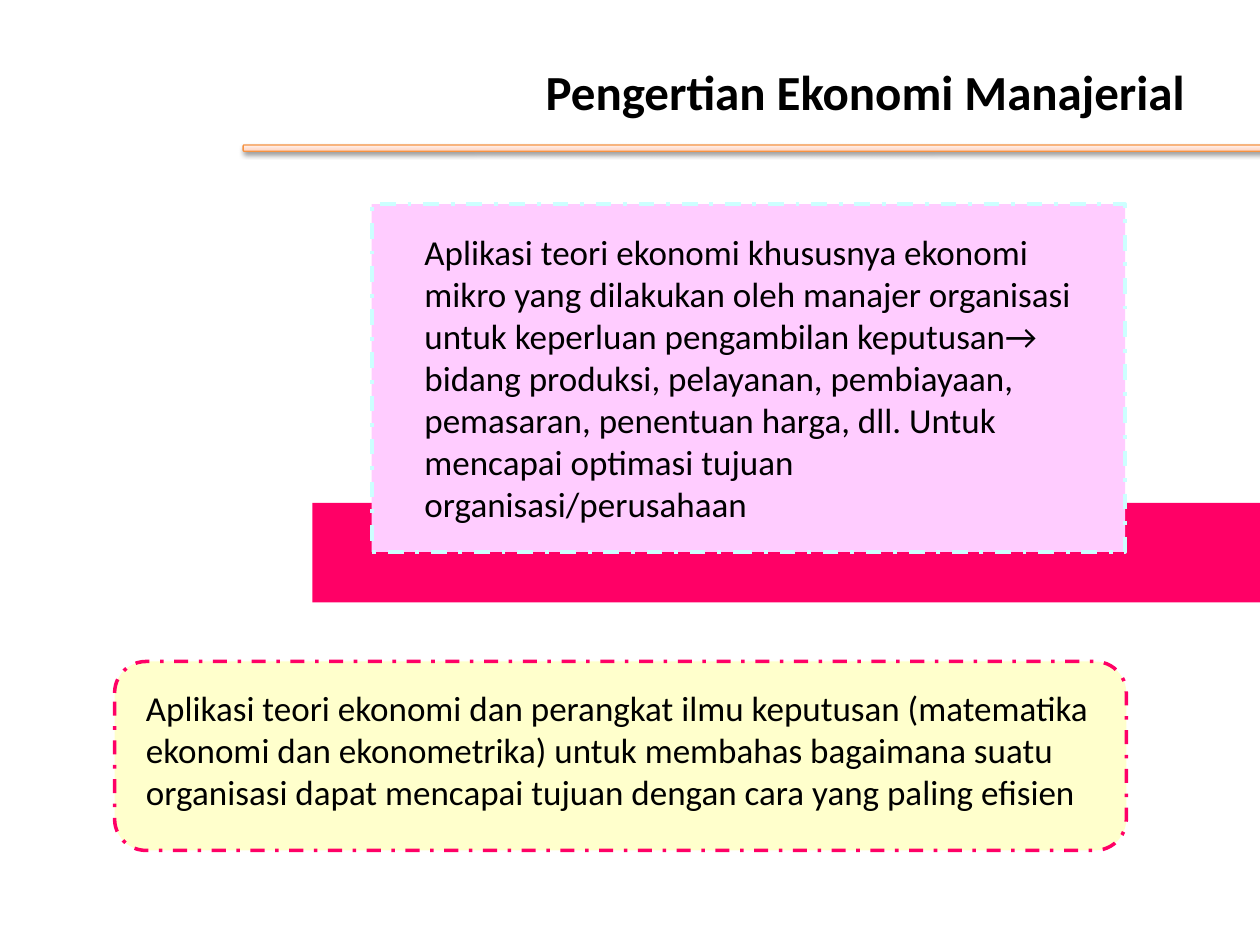
from dataclasses import dataclass

from lxml import etree
from pptx import Presentation
from pptx.dml.color import RGBColor
from pptx.enum import dml, shapes, text
from pptx.oxml import parse_xml
from pptx.oxml.ns import nsdecls
from pptx.util import Inches, Pt


@dataclass(frozen=True)
class Theme:
    font: str = "Calibri"
    title_size: int = 28
    body_size: int = 20
    ink: str = "000000"
    yellow: str = "FFFFCC"
    pink: str = "FFCCFF"
    magenta: str = "FF0066"
    cyan: str = "CCFFFF"
    rule_line: str = "F69240"
    rule_stops: tuple = ((0, "FFD2BD"), (35, "FFDED0"), (100, "FFF2ED"))


theme = Theme()


def add_panel(s, kind, box, fill=None, line=None, width=0, dash=None):
    sp = s.shapes.add_shape(kind, *map(Inches, box))
    sp.shadow.inherit = False
    if fill:
        sp.fill.solid()
        sp.fill.fore_color.rgb = RGBColor.from_string(fill)
    if line:
        sp.line.color.rgb = RGBColor.from_string(line)
        sp.line.width = Pt(width)
        sp.line.dash_style = dash
    else:
        sp.line.fill.background()
    return sp


def set_text(sp, content, size, bold=False, align=text.PP_ALIGN.LEFT):
    tf = sp.text_frame
    tf.word_wrap = True
    p = tf.paragraphs[0]
    p.text = content
    p.alignment = align
    p.font.name = theme.font
    p.font.size = Pt(size)
    p.font.bold = bold
    p.font.color.rgb = RGBColor.from_string(theme.ink)


prs = Presentation()
prs.slide_width, prs.slide_height = Inches(10), Inches(7.5)
s = prs.slides.add_slide(prs.slide_layouts[5])

rect = shapes.MSO_SHAPE.RECTANGLE
rounded = shapes.MSO_SHAPE.ROUNDED_RECTANGLE
dash_dot = dml.MSO_LINE.DASH_DOT

add_panel(s, rounded, (0.91, 5.25, 8.03, 1.5), theme.yellow, theme.magenta, 2, dash_dot)
add_panel(s, rect, (2.48, 3.99, 7.81, 0.79), theme.magenta)
add_panel(s, rect, (2.95, 1.62, 5.98, 2.76), theme.pink, theme.cyan, 2.25, dash_dot)

title = s.shapes.title
title.left, title.top, title.width, title.height = map(Inches, (0.5, 0.3, 9, 0.85))
title.text_frame.vertical_anchor = text.MSO_ANCHOR.MIDDLE
set_text(title, "Pengertian Ekonomi Manajerial", theme.title_size, True, text.PP_ALIGN.RIGHT)

definitions = [
    ((1.06, 5.4, 7.78, 1.34),
     "Aplikasi teori ekonomi dan perangkat ilmu keputusan (matematika ekonomi dan "
     "ekonometrika) untuk membahas bagaimana suatu organisasi dapat mencapai tujuan "
     "dengan cara yang paling efisien"),
    ((3.27, 1.78, 5.67, 2.46),
     "Aplikasi teori ekonomi khususnya ekonomi mikro yang dilakukan oleh manajer "
     "organisasi untuk keperluan pengambilan keputusan→ bidang produksi, pelayanan, "
     "pembiayaan, pemasaran, penentuan harga, dll. Untuk mencapai optimasi tujuan "
     "organisasi/perusahaan"),
]
for box, content in definitions:
    set_text(s.shapes.add_textbox(*map(Inches, box)), content, theme.body_size)

rule = add_panel(s, rounded, (1.93, 1.15, 8.36, 0.05), line=theme.rule_line, width=0.75)
stops = "".join(
    f'<a:gs pos="{pos * 1000}"><a:srgbClr val="{color}"/></a:gs>'
    for pos, color in theme.rule_stops
)
gradient = parse_xml(
    f'<a:gradFill {nsdecls("a")} rotWithShape="1"><a:gsLst>{stops}</a:gsLst>'
    '<a:lin ang="16200000" scaled="1"/></a:gradFill>'
)
shadow = parse_xml(
    f'<a:outerShdw {nsdecls("a")} blurRad="{Pt(3.1)}" dist="{Pt(1.6)}" dir="5400000" '
    f'rotWithShape="0"><a:srgbClr val="{theme.ink}"><a:alpha val="38000"/></a:srgbClr>'
    '</a:outerShdw>'
)
ns = {"a": etree.QName(gradient).namespace}
props = rule.element.spPr
props.find("a:prstGeom", ns).addnext(gradient)
props.find("a:effectLst", ns).append(shadow)

prs.save("out.pptx")
